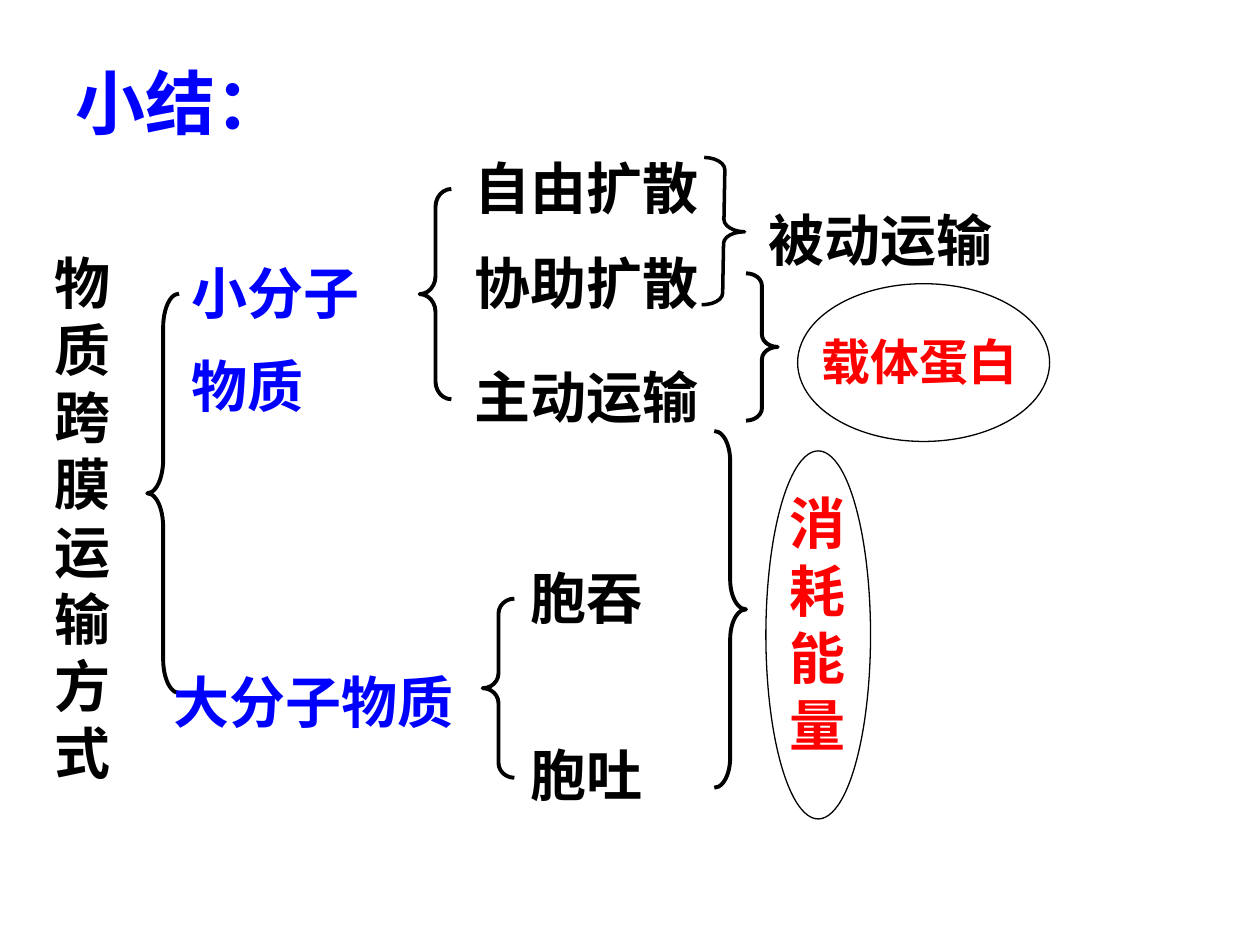
"""Build the summary slide on transport of substances across the membrane."""
from pptx import Presentation
from pptx.dml.color import RGBColor
from pptx.enum.shapes import MSO_SHAPE
from pptx.util import Cm, Pt

LEFT = MSO_SHAPE.LEFT_BRACE
RIGHT = MSO_SHAPE.RIGHT_BRACE
OVAL = MSO_SHAPE.OVAL
BLACK = RGBColor(0x00, 0x00, 0x00)
BLUE = RGBColor(0x00, 0x00, 0xFF)
RED = RGBColor(0xFF, 0x00, 0x00)


class Board:
    def __init__(self, slide, font="Times New Roman", size=32):
        self.slide = slide
        self.font = font
        self.size = size

    def label(self, lines, x, y, w, h=1.63, color=BLACK, size=None):
        box = self.slide.shapes.add_textbox(Cm(x), Cm(y), Cm(w), Cm(h))
        frame = box.text_frame
        frame.word_wrap = True
        for i, line in enumerate(lines):
            para = frame.add_paragraph() if i else frame.paragraphs[0]
            if i:
                para.space_before = Pt(15)
            run = para.add_run()
            run.text = line
            run.font.name = self.font
            run.font.size = Pt(size or self.size)
            run.font.bold = True
            run.font.color.rgb = color

    def outline(self, kind, x, y, w, h, width):
        shape = self.slide.shapes.add_shape(kind, Cm(x), Cm(y), Cm(w), Cm(h))
        shape.shadow.inherit = False
        shape.fill.background()
        shape.line.color.rgb = BLACK
        shape.line.width = Pt(width)
        return shape

    def brace(self, kind, x, y, h, bend, w=0.64, width=2.25, turn=0):
        shape = self.outline(kind, x, y, w, h, width)
        shape.adjustments[0] = bend
        shape.adjustments[1] = 0.5
        shape.rotation = turn

    def oval(self, x, y, w, h):
        self.outline(OVAL, x, y, w, h, 0.75)


def main():
    deck = Presentation()
    deck.slide_width, deck.slide_height = Cm(25.4), Cm(19.05)
    board = Board(deck.slides.add_slide(deck.slide_layouts[6]))

    board.label(["小结："], 1.27, 1.07, 6.15, 1.96, BLUE, 40)
    board.label(["物质跨膜运输方式"], 0.84, 4.88, 1.47, 11.07)
    board.brace(LEFT, 2.97, 5.92, 8.05, 1.06)

    board.label(["小分子", "物质"], 3.61, 5.08, 6.5, 3.63, BLUE)
    board.brace(LEFT, 8.46, 3.81, 4.24, 0.56)
    for name, y in (("自由扩散", 2.97), ("协助扩散", 4.88), ("主动运输", 7.19)):
        board.label([name], 9.32, y, 6.15)

    board.label(["大分子物质"], 3.25, 13.34, 8.6, color=BLUE)
    board.brace(LEFT, 9.73, 12.07, 3.61, 0.47)
    for name, y in (("胞吞", 11.23), ("胞吐", 14.81)):
        board.label([name], 10.44, y, 3.5)

    board.brace(LEFT, 14.17, 3.18, 2.97, 0.29, w=0.84, width=2, turn=181)
    board.label(["被动运输"], 15.24, 4.01, 5.51)

    board.brace(RIGHT, 15.04, 5.51, 2.97, 0.39)
    board.oval(16.08, 5.72, 5.08, 3.18)
    board.label(["载体蛋白"], 16.31, 6.55, 5.92, 1.45, RED, 28)

    board.brace(RIGHT, 14.4, 8.69, 7.19, 0.94)
    board.oval(15.44, 9.09, 2.11, 7.42)
    board.label(["消耗能量"], 15.67, 9.73, 2.54, 5.66, RED)

    deck.save("out.pptx")


if __name__ == "__main__":
    main()
